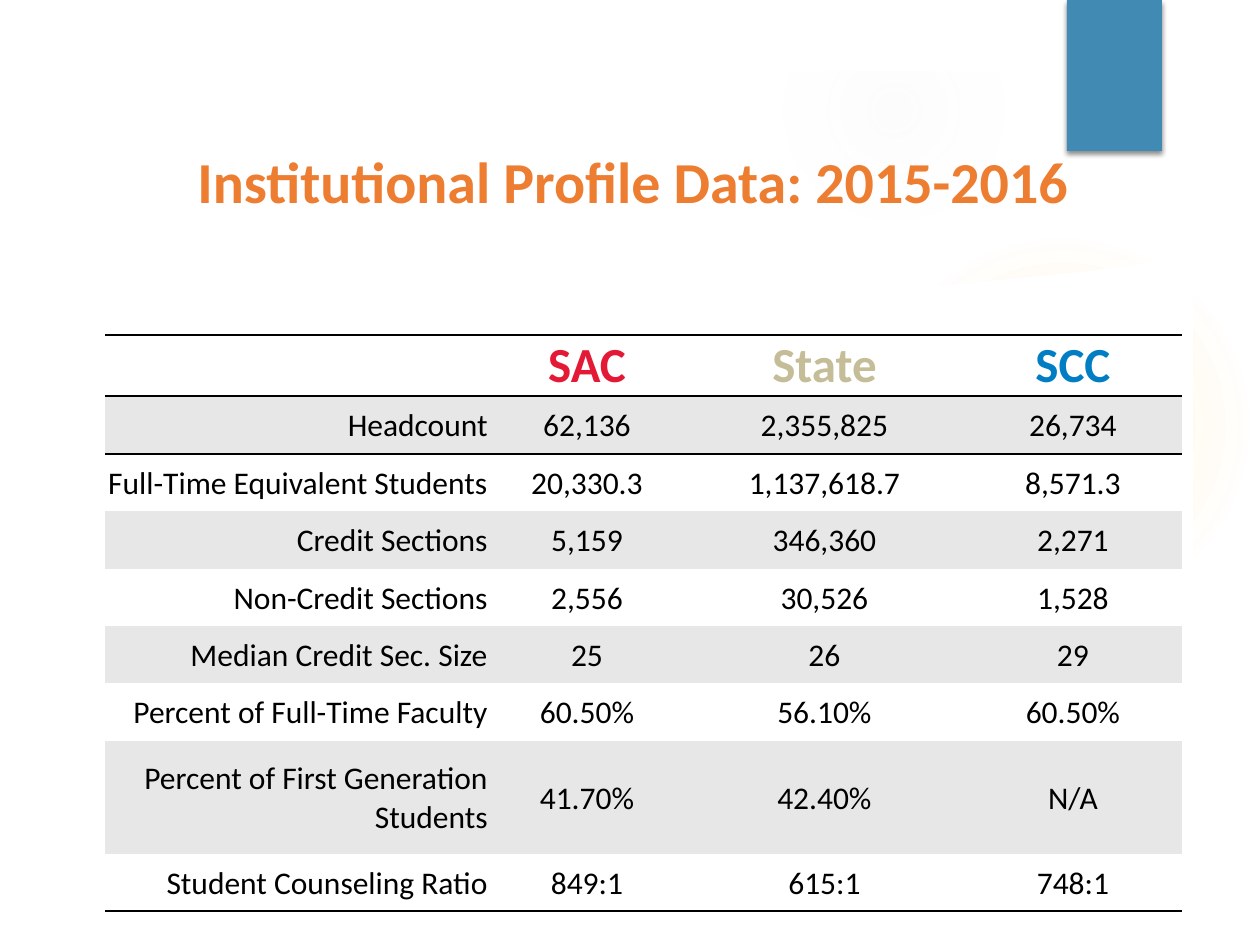
from itertools import pairwise

from lxml import etree
from pptx import Presentation
from pptx.dml.color import RGBColor
from pptx.enum.shapes import MSO_SHAPE
from pptx.enum.text import MSO_ANCHOR, MSO_AUTO_SIZE, PP_ALIGN
from pptx.oxml import parse_xml
from pptx.oxml.ns import nsdecls, qn
from pptx.util import Emu, Inches, Pt

TITLE = "Institutional Profile Data: 2015-2016"
COLLEGES = ("SAC", "State", "SCC")
PROFILE = [
    ("Headcount", "62,136", "2,355,825", "26,734"),
    ("Full-Time Equivalent Students", "20,330.3", "1,137,618.7", "8,571.3"),
    ("Credit Sections", "5,159", "346,360", "2,271"),
    ("Non-Credit Sections", "2,556", "30,526", "1,528"),
    ("Median Credit Sec. Size", "25", "26", "29"),
    ("Percent of Full-Time Faculty", "60.50%", "56.10%", "60.50%"),
    ("Percent of First Generation Students", "41.70%", "42.40%", "N/A"),
    ("Student Counseling Ratio", "849:1", "615:1", "748:1"),
]

FONT = "Calibri"
BLACK = RGBColor(0x00, 0x00, 0x00)
WHITE = RGBColor(0xFF, 0xFF, 0xFF)
ORANGE = RGBColor(0xED, 0x7D, 0x31)
BLUE = RGBColor(0x41, 0x8A, 0xB3)
BAND = RGBColor(0xE7, 0xE7, 0xE7)
GLOW_YELLOW = RGBColor(0xFE, 0xC3, 0x06)
GLOW_GREY = RGBColor(0xF1, 0xF1, 0xF1)
COLLEGE_COLORS = (
    RGBColor(0xE3, 0x19, 0x36),
    RGBColor(0xC4, 0xBD, 0x97),
    RGBColor(0x00, 0x7D, 0xC3),
)

# Lengths in px, 126 to the inch
SCALE = 914400 / 126
COLUMN_EDGES = (105, 489, 685, 964, 1182)
ROW_EDGES = (335, 395, 453, 510, 568, 625, 682, 740, 853, 910)
PANEL_OUTLINE = [(67, 256), (218, 273), (387, 287), (597, 295), (787, 294),
                 (938, 286), (1090, 271), (1193, 256), (1193, 881), (67, 881)]
NO_STYLE_NO_GRID = "{2D5ABB26-0587-4C30-8999-92F81FD0307C}"


def px(length):
    return Emu(round(length * SCALE))


def paint(shape, color):
    shape.fill.solid()
    shape.fill.fore_color.rgb = color
    shape.line.fill.background()
    shape.shadow.inherit = False


def add_block(slide, box, color, preset=MSO_SHAPE.RECTANGLE):
    block = slide.shapes.add_shape(preset, *map(px, box))
    paint(block, color)
    return block


def add_glow(slide, box, color, stops):
    """Circle that fades outwards; stops are (position %, opacity %)."""
    glow = add_block(slide, box, color, MSO_SHAPE.OVAL)
    stop_xml = "".join(
        f'<a:gs pos="{position * 1000}"><a:srgbClr val="{color}">'
        f'<a:alpha val="{opacity * 1000}"/></a:srgbClr></a:gs>'
        for position, opacity in stops)
    properties = glow._element.spPr
    properties.replace(properties.find(qn("a:solidFill")), parse_xml(
        f'<a:gradFill {nsdecls("a")}><a:gsLst>{stop_xml}</a:gsLst>'
        '<a:path path="circle"><a:fillToRect l="50000" t="50000" '
        'r="50000" b="50000"/></a:path></a:gradFill>'))


def add_backdrop(slide):
    add_glow(slide, (868, 231, 388, 388), GLOW_YELLOW, [(0, 7), (36, 6), (69, 0)])
    add_glow(slide, (784, 0, 220, 220), GLOW_GREY, [(0, 14), (36, 7), (73, 0)])
    builder = slide.shapes.build_freeform(*PANEL_OUTLINE[0], scale=SCALE)
    builder.add_line_segments(PANEL_OUTLINE[1:], close=True)
    paint(builder.convert_to_shape(), WHITE)
    add_block(slide, (0, 0, 1260, 71), WHITE)

    ribbon = add_block(slide, (1067, 0, 95, 151), BLUE)
    ribbon._element.spPr.find(qn("a:effectLst")).append(parse_xml(
        f'<a:outerShdw {nsdecls("a")} blurRad="{Pt(3)}" dist="{Pt(2)}" '
        'dir="5400000" rotWithShape="0"><a:srgbClr val="000000">'
        '<a:alpha val="45000"/></a:srgbClr></a:outerShdw>'))


def write(paragraph, text, size, color, bold, align):
    paragraph.alignment = align
    run = paragraph.add_run()
    run.text = text
    run.font.name = FONT
    run.font.size = Pt(size)
    run.font.bold = bold
    run.font.color.rgb = color


def set_title(slide):
    title = slide.shapes.title
    title.left, title.top, title.width, title.height = map(px, (63, 94, 1134, 173))
    frame = title.text_frame
    frame.auto_size = MSO_AUTO_SIZE.NONE
    frame.word_wrap = True
    frame.vertical_anchor = MSO_ANCHOR.MIDDLE
    frame.margin_left = Inches(0.1)
    frame.margin_right = frame.margin_top = frame.margin_bottom = Inches(0.05)
    write(frame.paragraphs[0], TITLE, 33.1, ORANGE, True, PP_ALIGN.CENTER)


def add_rule(cell, side):
    """Black line on one side of a cell: lnT or lnB."""
    line = etree.SubElement(cell._tc.get_or_add_tcPr(), qn(f"a:{side}"), w=str(Pt(1)))
    fill = etree.SubElement(line, qn("a:solidFill"))
    etree.SubElement(fill, qn("a:srgbClr"), val=str(BLACK))


def add_profile_table(slide):
    rows = [("", *COLLEGES), *PROFILE]
    left, top = COLUMN_EDGES[0], ROW_EDGES[0]
    table = slide.shapes.add_table(
        len(rows), len(rows[0]), px(left), px(top),
        px(COLUMN_EDGES[-1] - left), px(ROW_EDGES[-1] - top)).table
    table.first_row = table.horz_banding = False
    table._tbl.tblPr.find(qn("a:tableStyleId")).text = NO_STYLE_NO_GRID
    for column, (start, end) in zip(table.columns, pairwise(COLUMN_EDGES)):
        column.width = px(end - start)
    for row, (start, end) in zip(table.rows, pairwise(ROW_EDGES)):
        row.height = px(end - start)

    for r, values in enumerate(rows):
        for c, value in enumerate(values):
            cell = table.cell(r, c)
            cell.margin_left = cell.margin_right = cell.margin_top = Inches(0.01)
            cell.margin_bottom = 0
            cell.vertical_anchor = MSO_ANCHOR.MIDDLE
            if r <= 1:
                add_rule(cell, "lnT")
            if r in (0, len(rows) - 1):
                add_rule(cell, "lnB")
            if r % 2:
                cell.fill.solid()
                cell.fill.fore_color.rgb = BAND
            else:
                cell.fill.background()
            paragraph = cell.text_frame.paragraphs[0]
            if r == 0 and c > 0:
                write(paragraph, value, 28, COLLEGE_COLORS[c - 1], True, PP_ALIGN.CENTER)
            elif r > 0:
                align = PP_ALIGN.CENTER if c else PP_ALIGN.RIGHT
                write(paragraph, value, 18, BLACK, False, align)


def main():
    deck = Presentation()
    deck.slide_width, deck.slide_height = px(1260), px(945)
    slide = deck.slides.add_slide(deck.slide_layouts[5])
    add_backdrop(slide)
    set_title(slide)
    # The title stands in front of the backdrop
    slide.shapes._spTree.append(slide.shapes.title._element)
    add_profile_table(slide)
    deck.save("out.pptx")


if __name__ == "__main__":
    main()
